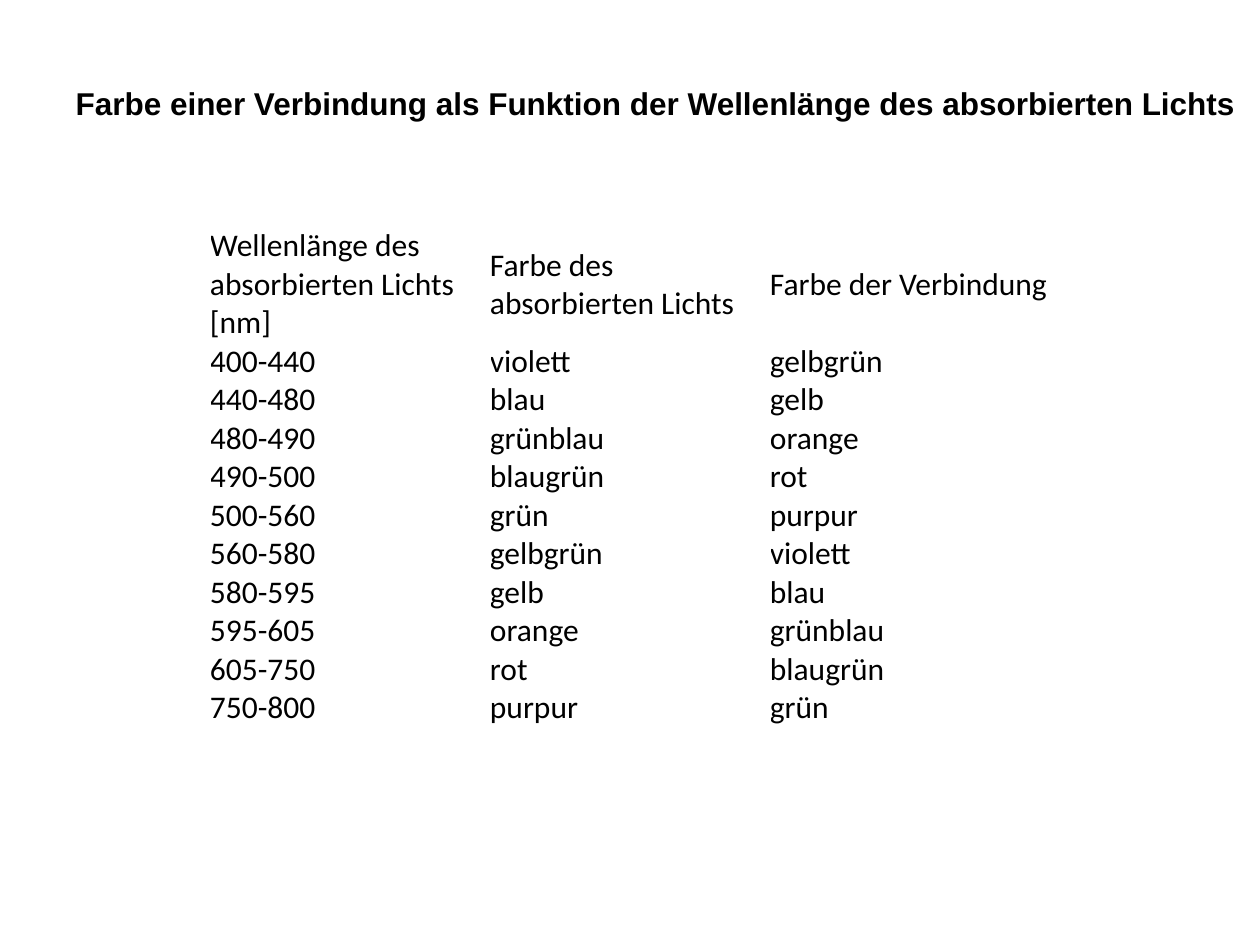
from pptx import Presentation
from pptx.dml.color import RGBColor
from pptx.enum.text import MSO_ANCHOR as Anchor, PP_ALIGN as Align
from pptx.util import Inches, Pt

WIDE, HIGH = Inches(10), Inches(7.5)
BLACK = "000000"
TITLE = ("Farbe einer Verbindung als Funktion der Wellenlänge "
         "des absorbierten Lichts")
HEADS = ("Wellenlänge des absorbierten Lichts [nm]",
         "Farbe des absorbierten Lichts", "Farbe der Verbindung")
ROWS = (
    ("400-440", "violett", "gelbgrün"),
    ("440-480", "blau", "gelb"),
    ("480-490", "grünblau", "orange"),
    ("490-500", "blaugrün", "rot"),
    ("500-560", "grün", "purpur"),
    ("560-580", "gelbgrün", "violett"),
    ("580-595", "gelb", "blau"),
    ("595-605", "orange", "grünblau"),
    ("605-750", "rot", "blaugrün"),
    ("750-800", "purpur", "grün"),
)


def color(code):
    return RGBColor.from_string(code)


def assign(item, values):
    for name, value in values.items():
        setattr(item, name, value)


def style(frame, text, font, bold=False):
    frame.text = text
    line = frame.paragraphs[0]
    line.alignment = Align.LEFT
    face = line.runs[0].font
    assign(face, {"name": font, "size": Pt(18), "bold": bold})
    face.color.rgb = color(BLACK)


def add_title(slide):
    title = slide.shapes.title
    assign(title, {"left": 0, "top": 0, "width": WIDE, "height": Inches(1.31)})
    frame = title.text_frame
    style(frame, TITLE, "Arial", bold=True)
    # The insets place the single line low and to the right in its box
    assign(frame, {"word_wrap": True, "vertical_anchor": Anchor.MIDDLE,
                   "margin_left": Inches(0.6), "margin_right": 0,
                   "margin_top": Inches(0.38), "margin_bottom": Inches(0.05)})


def add_grid(slide):
    cells = (HEADS, *ROWS)
    step = Inches(0.3)
    # Three equal columns fill the middle two thirds of the slide
    table = slide.shapes.add_table(
        len(cells), len(HEADS), WIDE // 6, Inches(1.8),
        WIDE * 2 // 3, step * (len(cells) + 2)).table
    assign(table, {"first_row": False, "horz_banding": False})
    for r, row in enumerate(cells):
        # The heading needs three lines, every other row one
        table.rows[r].height = step if r else step * 3
        for c, text in enumerate(row):
            cell = table.cell(r, c)
            cell.fill.background()
            assign(cell, {"margin_left": 0, "margin_right": 0,
                          "margin_top": 0, "margin_bottom": 0,
                          "vertical_anchor": Anchor.MIDDLE})
            style(cell.text_frame, text, "Calibri")


def main():
    deck = Presentation()
    assign(deck, {"slide_width": WIDE, "slide_height": HIGH})
    slide = deck.slides.add_slide(deck.slide_layouts[5])
    add_grid(slide)
    add_title(slide)
    deck.save("out.pptx")


if __name__ == "__main__":
    main()
